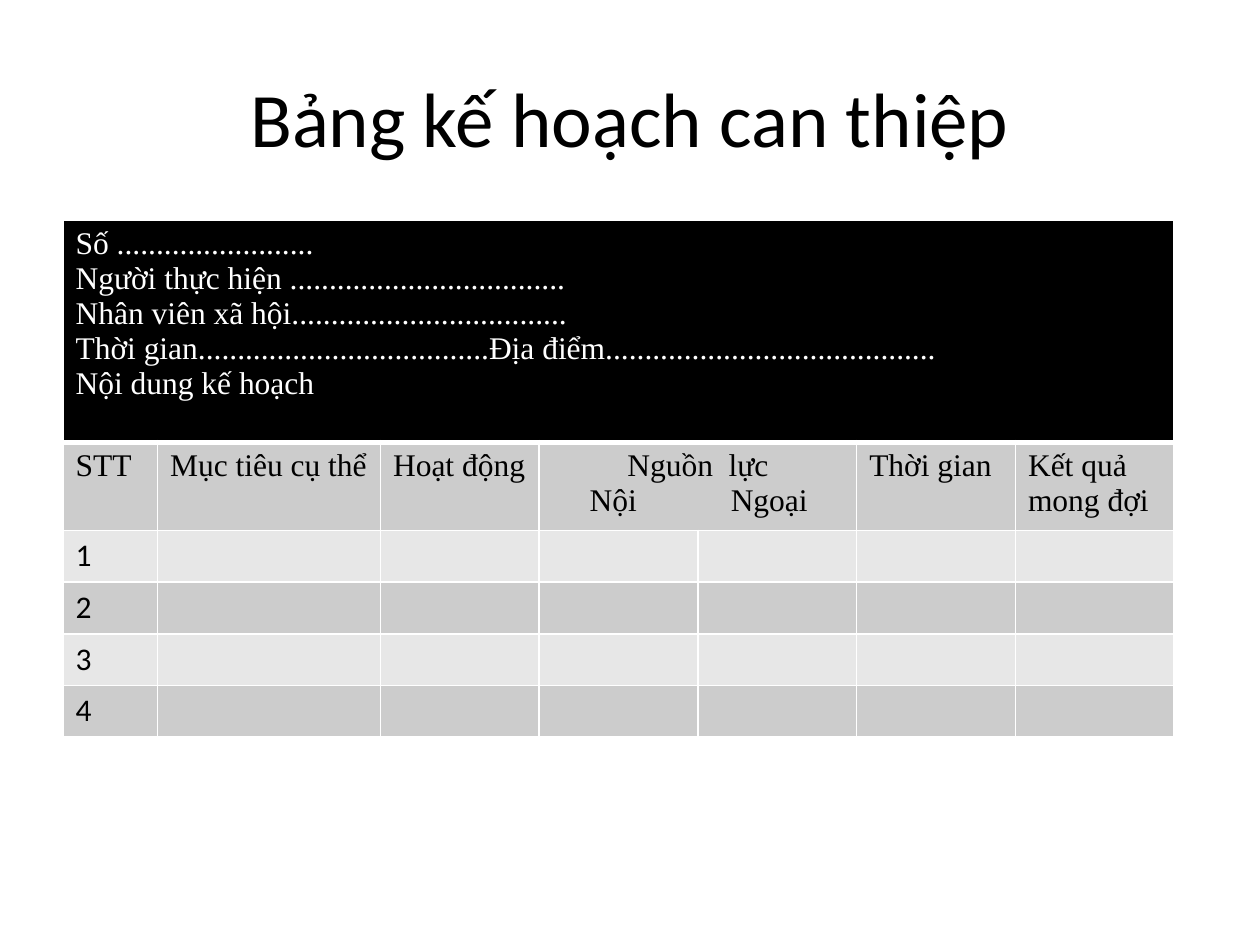
from lxml.etree import SubElement
from pptx import Presentation
from pptx.dml.color import RGBColor
from pptx.enum.text import MSO_ANCHOR, PP_ALIGN
from pptx.oxml.ns import qn
from pptx.util import Inches, Pt

COLORS = {
    "black": "000000",
    "white": "FFFFFF",
    "band_dark": "CCCCCC",
    "band_light": "E7E7E7",
}
SERIF, SANS = "Times New Roman", "Calibri"

COLUMN_WIDTHS = [0.75, 1.77] + [1.26] * 5
ROW_HEIGHTS = [1.76, 0.66] + [0.41] * 4
PLAN_DETAILS = [
    "Số .........................",
    "Người thực hiện ...................................",
    "Nhân viên xã hội...................................",
    "Thời gian.....................................Địa điểm"
    "..........................................",
    "Nội dung kế hoạch",
]
RESOURCES = ["Nguồn  lực", "\tNội\tNgoại"]
RESOURCE_TABS = [0.3, 1.42]
RESOURCE_COLUMN = 3
# Column number -> heading lines
HEADINGS = {
    0: ["STT"],
    1: ["Mục tiêu cụ thể"],
    2: ["Hoạt động"],
    RESOURCE_COLUMN: RESOURCES,
    5: ["Thời gian"],
    6: ["Kết quả mong đợi"],
}


def rgb(color):
    return RGBColor.from_string(COLORS[color])


def write_lines(frame, lines, font, size, color, align=PP_ALIGN.LEFT):
    frame.text = "\n".join(lines)
    font_format = {"name": font, "size": Pt(size)}
    for paragraph in frame.paragraphs:
        paragraph.alignment = align
        for run in paragraph.runs:
            for attribute, value in font_format.items():
                setattr(run.font, attribute, value)
            run.font.color.rgb = rgb(color)


def add_title(slide, title):
    title_box = slide.shapes.add_textbox(
        Inches(0.5), Inches(0.3), Inches(9), Inches(1.25))
    frame_format = {"word_wrap": True, "vertical_anchor": MSO_ANCHOR.MIDDLE}
    for attribute, value in frame_format.items():
        setattr(title_box.text_frame, attribute, value)
    write_lines(title_box.text_frame, [title], SANS, 44, "black", PP_ALIGN.CENTER)


def set_borders(cell, bottom_width):
    properties = cell._tc.get_or_add_tcPr()
    widths = {"a:lnL": 1, "a:lnR": 1, "a:lnT": 1, "a:lnB": bottom_width}
    for side, width in widths.items():
        line = SubElement(properties, qn(side), w=str(Pt(width)))
        fill = SubElement(line, qn("a:solidFill"))
        SubElement(fill, qn("a:srgbClr"), val=COLORS["white"])


def set_tabs(paragraph, positions):
    tab_list = SubElement(paragraph._p.get_or_add_pPr(), qn("a:tabLst"))
    for position in positions:
        SubElement(tab_list, qn("a:tab"), pos=str(Inches(position)), algn="l")


def row_color(row):
    if row == 0:
        return "black"
    return "band_dark" if row % 2 else "band_light"


def add_grid(slide):
    grid = slide.shapes.add_table(
        len(ROW_HEIGHTS), len(COLUMN_WIDTHS), Inches(0.5), Inches(1.75),
        Inches(sum(COLUMN_WIDTHS)), Inches(sum(ROW_HEIGHTS))).table
    for column, width in zip(grid.columns, COLUMN_WIDTHS):
        column.width = Inches(width)
    for number, (row, height) in enumerate(zip(grid.rows, ROW_HEIGHTS)):
        row.height = Inches(height)
        for cell in row.cells:
            set_borders(cell, 1 if number else 3)
            cell.fill.solid()
            cell.fill.fore_color.rgb = rgb(row_color(number))
    return grid


def fill_plan(grid):
    # Details across the full width
    details = grid.cell(0, 0)
    details.merge(grid.cell(0, len(COLUMN_WIDTHS) - 1))
    write_lines(details.text_frame, PLAN_DETAILS, SERIF, 18, "white")

    # Column headings, with internal and external resources under one heading
    resources = grid.cell(1, RESOURCE_COLUMN)
    resources.merge(grid.cell(1, RESOURCE_COLUMN + 1))
    for column, lines in HEADINGS.items():
        write_lines(grid.cell(1, column).text_frame, lines, SERIF, 18, "black")
    resource_title, resource_kinds = resources.text_frame.paragraphs
    resource_title.alignment = PP_ALIGN.CENTER
    set_tabs(resource_kinds, RESOURCE_TABS)

    # Numbered rows
    for number in range(1, 5):
        write_lines(grid.cell(number + 1, 0).text_frame, [str(number)],
                    SANS, 18, "black")


def main():
    presentation = Presentation()
    presentation.slide_width = Inches(10)
    presentation.slide_height = Inches(7.5)
    slide = presentation.slides.add_slide(presentation.slide_layouts[6])
    add_title(slide, "Bảng kế hoạch can thiệp")
    fill_plan(add_grid(slide))
    presentation.save("out.pptx")


if __name__ == "__main__":
    main()
